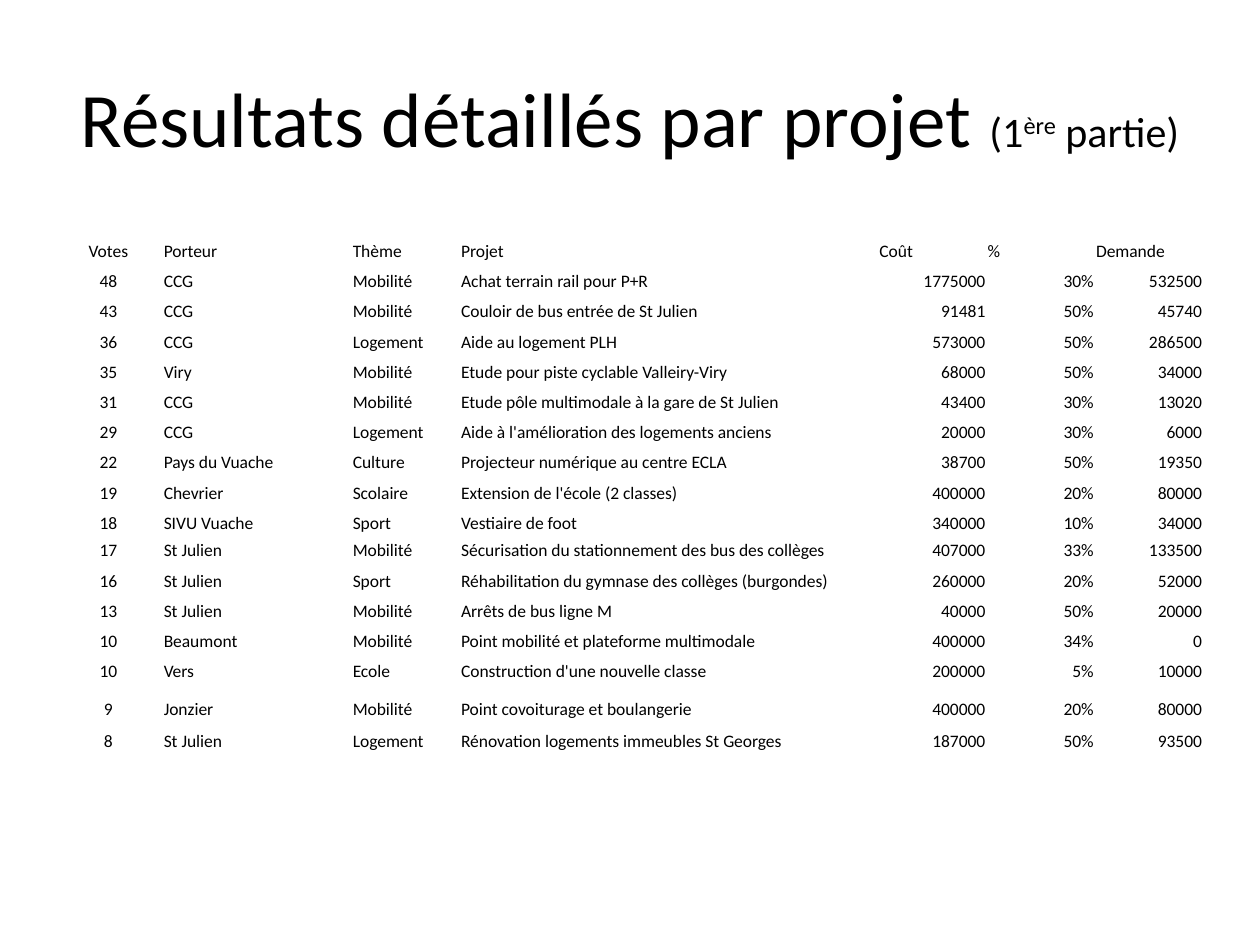
from typing import NamedTuple

from pptx import Presentation
from pptx.dml.color import RGBColor
from pptx.enum.text import MSO_ANCHOR, PP_ALIGN
from pptx.util import Inches, Pt

BLACK = RGBColor(0x00, 0x00, 0x00)
FONT = "Calibri"
SUPERSCRIPT = 30000


class Span(NamedTuple):
    text: str
    size: int
    baseline: int = 0


class Column(NamedTuple):
    heading: str
    width: float
    heading_align: PP_ALIGN
    align: PP_ALIGN


class Project(NamedTuple):
    votes: int
    sponsor: str
    theme: str
    name: str
    cost: int
    share: str
    request: int


TITLE = [
    Span("Résultats détaillés par projet ", 44),
    Span("(1", 24),
    Span("ère", 24, SUPERSCRIPT),
    Span(" partie)", 24),
]

COLUMNS = [
    Column("Votes", 0.86, PP_ALIGN.CENTER, PP_ALIGN.CENTER),
    Column("Porteur", 1.5, PP_ALIGN.LEFT, PP_ALIGN.LEFT),
    Column("Thème", 0.86, PP_ALIGN.LEFT, PP_ALIGN.LEFT),
    Column("Projet", 3.32, PP_ALIGN.LEFT, PP_ALIGN.LEFT),
    Column("Coût", 0.86, PP_ALIGN.LEFT, PP_ALIGN.RIGHT),
    Column("%", 0.86, PP_ALIGN.LEFT, PP_ALIGN.RIGHT),
    Column("Demande", 0.86, PP_ALIGN.LEFT, PP_ALIGN.RIGHT),
]

PROJECTS = [
    Project(48, "CCG", "Mobilité", "Achat terrain rail pour P+R", 1775000, "30%", 532500),
    Project(43, "CCG", "Mobilité", "Couloir de bus entrée de St Julien", 91481, "50%", 45740),
    Project(36, "CCG", "Logement", "Aide au logement PLH", 573000, "50%", 286500),
    Project(35, "Viry", "Mobilité", "Etude pour piste cyclable Valleiry-Viry", 68000, "50%", 34000),
    Project(31, "CCG", "Mobilité", "Etude pôle multimodale à la gare de St Julien", 43400, "30%", 13020),
    Project(29, "CCG", "Logement", "Aide à l'amélioration des logements anciens", 20000, "30%", 6000),
    Project(22, "Pays du Vuache", "Culture", "Projecteur numérique au centre ECLA", 38700, "50%", 19350),
    Project(19, "Chevrier", "Scolaire", "Extension de l'école (2 classes)", 400000, "20%", 80000),
    Project(18, "SIVU Vuache", "Sport", "Vestiaire de foot", 340000, "10%", 34000),
    Project(17, "St Julien", "Mobilité", "Sécurisation du stationnement des bus des collèges", 407000, "33%", 133500),
    Project(16, "St Julien", "Sport", "Réhabilitation du gymnase des collèges (burgondes)", 260000, "20%", 52000),
    Project(13, "St Julien", "Mobilité", "Arrêts de bus ligne M", 40000, "50%", 20000),
    Project(10, "Beaumont", "Mobilité", "Point mobilité et plateforme multimodale", 400000, "34%", 0),
    Project(10, "Vers", "Ecole", "Construction d'une nouvelle classe", 200000, "5%", 10000),
    Project(9, "Jonzier", "Mobilité", "Point covoiturage et boulangerie", 400000, "20%", 80000),
    Project(8, "St Julien", "Logement", "Rénovation logements immeubles St Georges", 187000, "50%", 93500),
]

ROW_HEIGHT = 0.24
SPECIAL_HEIGHTS = {10: 0.22, 15: 0.3, 16: 0.25}


def write_spans(para, spans: list[Span], align: PP_ALIGN) -> None:
    para.alignment = align
    for item in spans:
        span = para.add_run()
        span.text = item.text
        span.font.name = FONT
        span.font.size = Pt(item.size)
        span.font.color.rgb = BLACK
        if item.baseline:
            span._r.get_or_add_rPr().set("baseline", str(item.baseline))


def add_title(page) -> None:
    box = page.shapes.add_textbox(Inches(0.5), Inches(0.3), Inches(9), Inches(1.25))
    frame = box.text_frame
    frame.word_wrap = True
    frame.vertical_anchor = MSO_ANCHOR.MIDDLE
    write_spans(frame.paragraphs[0], TITLE, PP_ALIGN.CENTER)


def fill_cell(cell, text: str, align: PP_ALIGN) -> None:
    cell.fill.background()
    cell.vertical_anchor = MSO_ANCHOR.BOTTOM
    cell.margin_left = cell.margin_right = cell.margin_top = Inches(0.01)
    cell.margin_bottom = Inches(0)
    write_spans(cell.text_frame.paragraphs[0], [Span(text, 10)], align)


def add_results(page) -> None:
    heights = [SPECIAL_HEIGHTS.get(row, ROW_HEIGHT) for row in range(len(PROJECTS) + 1)]
    width = sum(column.width for column in COLUMNS)
    table = page.shapes.add_table(
        len(heights), len(COLUMNS),
        Inches(0.43), Inches(1.84), Inches(width), Inches(sum(heights)),
    ).table
    table.first_row = False
    table.horz_banding = False
    for row, height in zip(table.rows, heights):
        row.height = Inches(height)
    for index, column in enumerate(COLUMNS):
        table.columns[index].width = Inches(column.width)
        fill_cell(table.cell(0, index), column.heading, column.heading_align)
        for number, project in enumerate(PROJECTS, start=1):
            fill_cell(table.cell(number, index), str(project[index]), column.align)


def main() -> None:
    """Build the slide of detailed voting results by project."""
    deck = Presentation()
    deck.slide_width = Inches(10)
    deck.slide_height = Inches(7.5)
    page = deck.slides.add_slide(deck.slide_layouts[6])
    add_title(page)
    add_results(page)
    deck.save("out.pptx")


if __name__ == "__main__":
    main()
